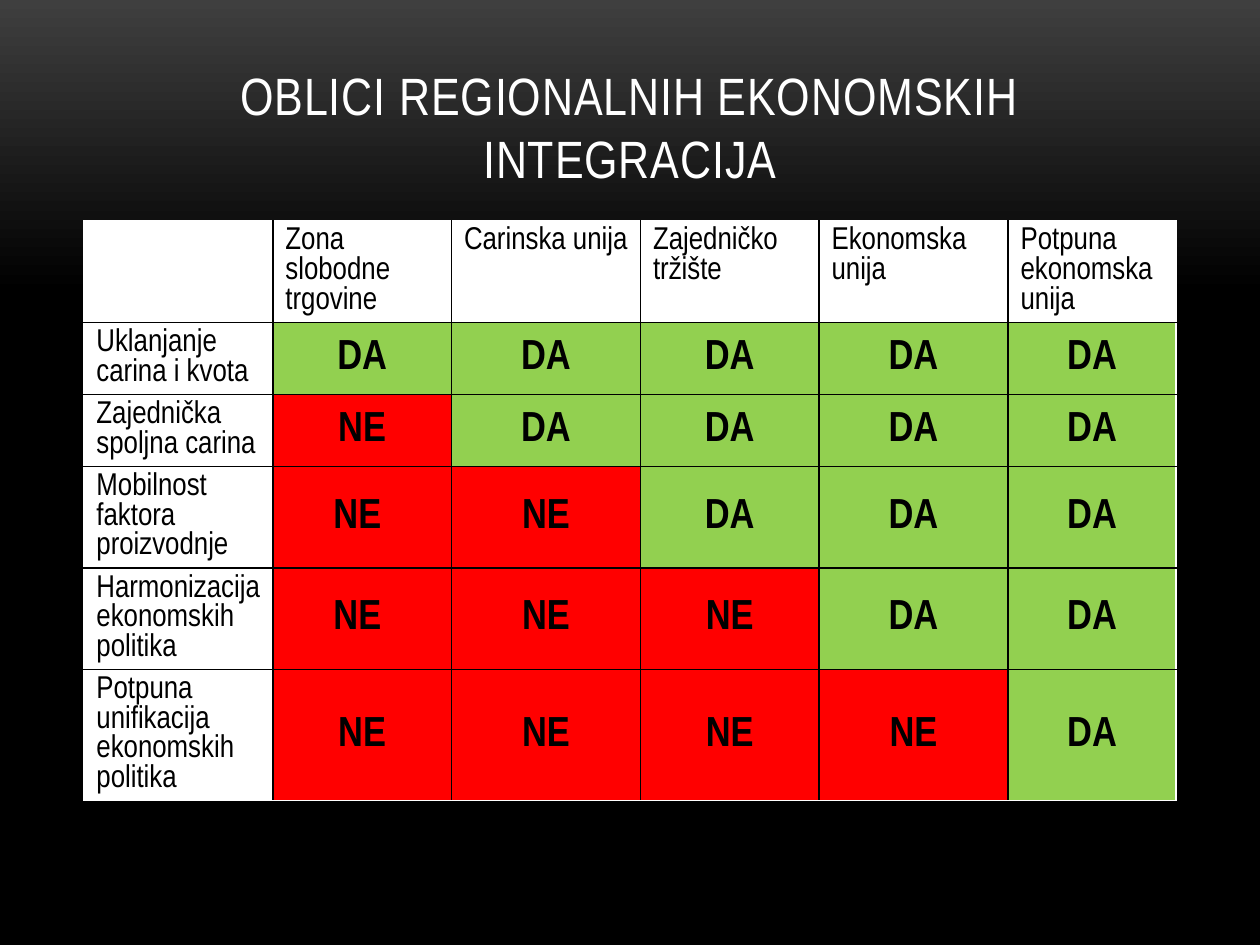
from copy import deepcopy
from dataclasses import dataclass

from lxml import etree
from pptx import Presentation
from pptx import util as u
from pptx.dml.color import RGBColor
from pptx.enum import text
from pptx.oxml.ns import qn


@dataclass(frozen=True)
class Theme:
    font: str = "Arial Narrow"
    title_size: int = 30
    label_size: int = 18
    answer_size: int = 24
    white: str = "FFFFFF"
    black: str = "000000"
    glow: str = "3F3F3F"
    yes: str = "92D050"
    no: str = "FF0000"


@dataclass(frozen=True)
class Criterion:
    label: str
    answers: tuple[str, ...]
    height: float


THEME = Theme()
TITLE = "OBLICI REGIONALNIH EKONOMSKIH INTEGRACIJA"
FORMS = ("", "Zona slobodne trgovine", "Carinska unija", "Zajedničko tržište",
         "Ekonomska unija", "Potpuna ekonomska unija")
CRITERIA = (
    Criterion("Uklanjanje carina i kvota", ("DA", "DA", "DA", "DA", "DA"), 1.45),
    Criterion("Zajednička spoljna carina", ("NE", "DA", "DA", "DA", "DA"), 1.45),
    Criterion("Mobilnost faktora proizvodnje", ("NE ", "NE", "DA", "DA", "DA"), 2.05),
    Criterion("Harmonizacija ekonomskih politika", ("NE ", "NE", "NE", "DA", "DA"), 2.05),
    Criterion("Potpuna unifikacija ekonomskih politika", ("NE", "NE", "NE", "NE", "DA"), 2.64),
)
HEADER_HEIGHT = 2.05
COLUMN_WIDTHS = (3.81, 3.6, 3.81, 3.6, 3.81, 3.39)
LEFT, TABLE_TOP, WIDTH = 1.69, 4.45, 22.02


def add_run(paragraph, words: str, size: int, color: str, bold: bool = False):
    run = paragraph.add_run()
    run.text = words
    run.font.name = THEME.font
    run.font.size = u.Pt(size)
    run.font.bold = bold
    run.font.color.rgb = RGBColor.from_string(color)
    return run


def paint_background(slide) -> None:
    fill = slide.background.fill
    fill.gradient()
    fill.gradient_angle = 270
    stop_list = slide.element.find(".//" + qn("a:gsLst"))
    stop_list.append(deepcopy(stop_list[-1]))
    stops = ((0, THEME.glow), (0.31, THEME.black), (1, THEME.black))
    for stop, (position, color) in zip(fill.gradient_stops, stops):
        stop.position = position
        stop.color.rgb = RGBColor.from_string(color)


def set_title(slide) -> None:
    title = slide.shapes.title
    title.left, title.top = u.Cm(LEFT), u.Cm(0.76)
    title.width, title.height = u.Cm(WIDTH), u.Cm(3.18)
    frame = title.text_frame
    frame.word_wrap = True
    frame.auto_size = text.MSO_AUTO_SIZE.NONE
    frame.vertical_anchor = text.MSO_ANCHOR.BOTTOM
    paragraph = frame.paragraphs[0]
    paragraph.alignment = text.PP_ALIGN.CENTER
    run = add_run(paragraph, TITLE, THEME.title_size, THEME.white)
    run.font._element.set("spc", "50")


def set_borders(cell, colors: dict[str, str]) -> None:
    properties = cell._tc.get_or_add_tcPr()
    for index, (side, color) in enumerate(colors.items()):
        line = etree.Element(qn(f"a:ln{side}"), w=str(u.Pt(1)))
        fill = etree.SubElement(line, qn("a:solidFill"))
        etree.SubElement(fill, qn("a:srgbClr"), val=color)
        properties.insert(index, line)  # borders come before the cell fill


def fill_cell(cell, words: str, is_answer: bool) -> None:
    color = THEME.white
    paragraph = cell.text_frame.paragraphs[0]
    if is_answer:
        color = THEME.yes if words == "DA" else THEME.no
        cell.vertical_anchor = text.MSO_ANCHOR.MIDDLE
        paragraph.alignment = text.PP_ALIGN.CENTER
    cell.fill.solid()
    cell.fill.fore_color.rgb = RGBColor.from_string(color)
    if words:
        size = THEME.answer_size if is_answer else THEME.label_size
        add_run(paragraph, words, size, THEME.black, is_answer)


def add_comparison(slide) -> None:
    rows = [FORMS] + [(item.label, *item.answers) for item in CRITERIA]
    heights = [HEADER_HEIGHT] + [item.height for item in CRITERIA]
    table = slide.shapes.add_table(
        len(rows), len(FORMS), u.Cm(LEFT), u.Cm(TABLE_TOP),
        u.Cm(WIDTH), u.Cm(sum(heights))).table
    table.first_row = table.horz_banding = False
    for column, width in zip(table.columns, COLUMN_WIDTHS):
        column.width = u.Cm(width)
    for row, height in zip(table.rows, heights):
        row.height = u.Cm(height)

    # White outer frame, black inner grid
    last_row, last_column = len(rows) - 1, len(FORMS) - 1
    for r, row in enumerate(rows):
        for c, words in enumerate(row):
            cell = table.cell(r, c)
            fill_cell(cell, words, is_answer=r > 0 and c > 0)
            outer = {"L": c == 0, "R": c == last_column, "T": r == 0, "B": r == last_row}
            set_borders(cell, {side: THEME.white if edge else THEME.black
                               for side, edge in outer.items()})


def main() -> None:
    presentation = Presentation()
    presentation.slide_width, presentation.slide_height = u.Cm(25.4), u.Cm(19.05)
    slide = presentation.slides.add_slide(presentation.slide_layouts[5])
    paint_background(slide)
    set_title(slide)
    add_comparison(slide)
    presentation.save("out.pptx")


if __name__ == "__main__":
    main()
